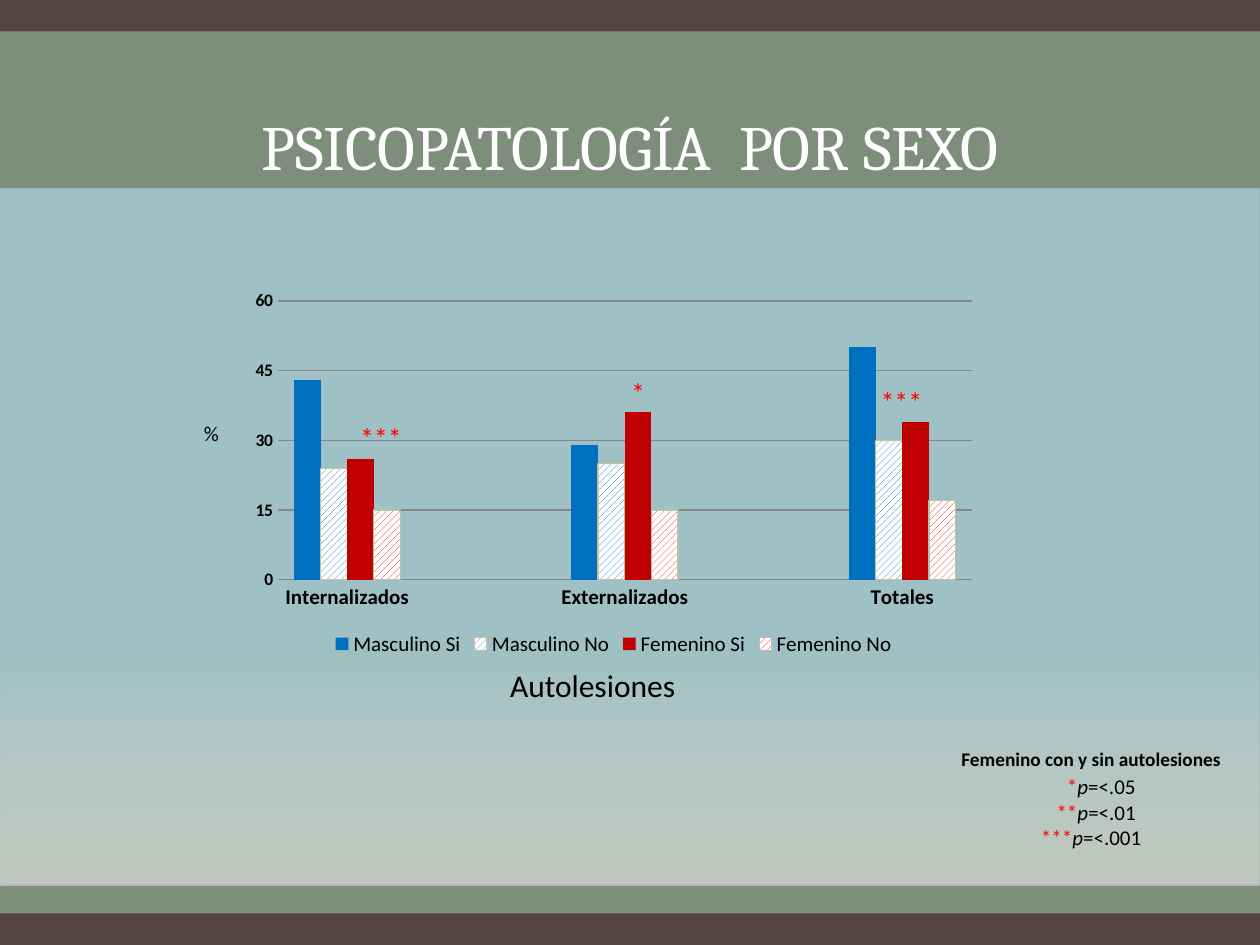
from lxml.etree import SubElement
from pptx import Presentation
from pptx.chart.data import CategoryChartData
from pptx.dml.color import RGBColor
from pptx.enum.chart import XL_CHART_TYPE, XL_LEGEND_POSITION, XL_TICK_MARK
from pptx.enum.dml import MSO_PATTERN
from pptx.enum.shapes import MSO_SHAPE
from pptx.enum.text import MSO_ANCHOR, PP_ALIGN
from pptx.oxml.ns import qn
from pptx.util import Inches, Pt

TITLE = "PSICOPATOLOGÍA  POR SEXO"
CATEGORIES = ["Internalizados", "", "Externalizados", "", "Totales"]
SERIES = [
    ("Masculino Si", (43, None, 29, None, 50), "0070C0", None),
    ("Masculino No", (24, None, 25, None, 30), "0070C0", "CBC292"),
    ("Femenino Si", (26, None, 36, None, 34), "C00000", None),
    ("Femenino No", (15, None, 15, None, 17), "FF0000", "ABC8AB"),
]
LABELS = [
    ("%", (1.52, 3.29, 0.39, 0.3), 12, "000000"),
    ("***", (2.76, 3.29, 0.66, 0.37), 16, "FF0000"),
    ("***", (6.89, 3, 0.66, 0.37), 16, "FF0000"),
    ("*", (4.91, 2.93, 0.61, 0.37), 16, "FF0000"),
    ("Autolesiones", (3.95, 5.24, 1.67, 0.4), 18, "000000"),
]
NOTE_HEAD = "Femenino con y sin autolesiones"
NOTES = [("*", "=<.05", 0.16), ("**", "=<.01", 0.08), ("***", "=<.001", 0)]


def rgb(value):
    return RGBColor.from_string(value)


def set_alpha(color_parent, percent):
    for color in color_parent.iter(qn("a:srgbClr")):
        SubElement(color, qn("a:alpha")).set("val", str(percent * 1000))


def add_band(s, at):
    sp = s.shapes.add_shape(MSO_SHAPE.RECTANGLE, *map(Inches, at))
    sp.shadow.inherit = False
    sp.line.fill.background()
    return sp


def add_run(p, text, size=12, color="000000", font="Calibri", bold=False, italic=False):
    r = p.add_run()
    r.text = text
    r.font.size, r.font.name = Pt(size), font
    r.font.bold, r.font.italic = bold, italic
    r.font.color.rgb = rgb(color)


def add_text(s, text, at, align=PP_ALIGN.LEFT, anchor=MSO_ANCHOR.TOP, **style):
    tf = s.shapes.add_textbox(*map(Inches, at)).text_frame
    tf.word_wrap = True
    tf.vertical_anchor = anchor
    p = tf.paragraphs[0]
    p.alignment = align
    add_run(p, text, **style)
    return tf


def add_background(s):
    add_band(s, (0, 0, 10, 7.5)).fill.solid()
    s.shapes[-1].fill.fore_color.rgb = rgb("554343")

    sp = add_band(s, (0, 0.25, 10, 7))
    sp.fill.solid()
    sp.fill.fore_color.rgb = rgb("829782")
    set_alpha(sp.fill._xPr.find(qn("a:solidFill")), 90)

    sp = add_band(s, (0, 1.5, 10, 5.53))
    sp.fill.gradient()
    sp.fill.gradient_angle = 270
    stops = [(0.66, "A8CDD7", 79), (1, "FFFFFF", 50)]
    for stop, (position, color, alpha) in zip(sp.fill.gradient_stops, stops):
        stop.position = position
        stop.color.rgb = rgb(color)
        set_alpha(stop._gs, alpha)


def add_psychopathology_chart(s):
    data = CategoryChartData()
    data.categories = CATEGORIES
    for name, values, *_ in SERIES:
        data.add_series(name, values)
    chart = s.shapes.add_chart(XL_CHART_TYPE.COLUMN_CLUSTERED,
                               *map(Inches, (1.91, 2.25, 5.92, 3)), data).chart
    chart.has_title = False
    chart.font.name, chart.font.size = "Calibri", Pt(10)
    chart.font.color.rgb = rgb("000000")
    chart.has_legend = True
    chart.legend.position = XL_LEGEND_POSITION.BOTTOM
    chart.legend.include_in_layout = False
    chart.legend.font.size = Pt(12)

    for axis, size in ((chart.category_axis, 12), (chart.value_axis, 10)):
        axis.major_tick_mark = axis.minor_tick_mark = XL_TICK_MARK.NONE
        axis.tick_labels.font.size = Pt(size)
        axis.tick_labels.font.bold = True
    chart.category_axis.format.line.color.rgb = rgb("868686")
    axis = chart.value_axis
    axis.minimum_scale, axis.maximum_scale, axis.major_unit = 0, 60, 15
    axis.format.line.fill.background()
    axis.major_gridlines.format.line.color.rgb = rgb("868686")

    plot = chart.plots[0]
    plot.gap_width, plot.overlap = 121, 0
    plot.vary_by_categories = False
    for series, (_, _, color, outline) in zip(plot.series, SERIES):
        series.invert_if_negative = False
        fill, line = series.format.fill, series.format.line
        if outline:
            fill.patterned()
            fill.pattern = MSO_PATTERN.WIDE_UPWARD_DIAGONAL
            fill.back_color.rgb = rgb("FFFFFF")
            line.color.rgb = rgb(outline)
            line.width = Pt(0.75)
        else:
            fill.solid()
            line.fill.background()
        fill.fore_color.rgb = rgb(color)


def add_significance_notes(s):
    tf = add_text(s, NOTE_HEAD, (7.3, 5.79, 2.72, 1.01), PP_ALIGN.CENTER, size=11, bold=True)
    tf.margin_top = Inches(0.14)
    tf.paragraphs[0].space_after = Pt(2)
    for stars, limit, indent in NOTES:
        p = tf.add_paragraph()
        p.alignment = PP_ALIGN.CENTER
        p._p.get_or_add_pPr().set("marL", str(Inches(indent)))
        add_run(p, stars, color="FF0000")
        add_run(p, "p", italic=True)
        add_run(p, limit)


def main():
    """Build the slide on psychopathology by sex."""
    prs = Presentation()
    prs.slide_width, prs.slide_height = Inches(10), Inches(7.5)
    s = prs.slides.add_slide(prs.slide_layouts[6])
    add_background(s)
    add_text(s, TITLE, (0.5, 0.25, 9, 1.25), PP_ALIGN.CENTER, MSO_ANCHOR.BOTTOM,
             size=36, color="FFFFFF", font="Cambria")
    add_significance_notes(s)
    add_psychopathology_chart(s)
    for text, at, size, color in LABELS:
        add_text(s, text, at, size=size, color=color)
    prs.save("out.pptx")


if __name__ == "__main__":
    main()
